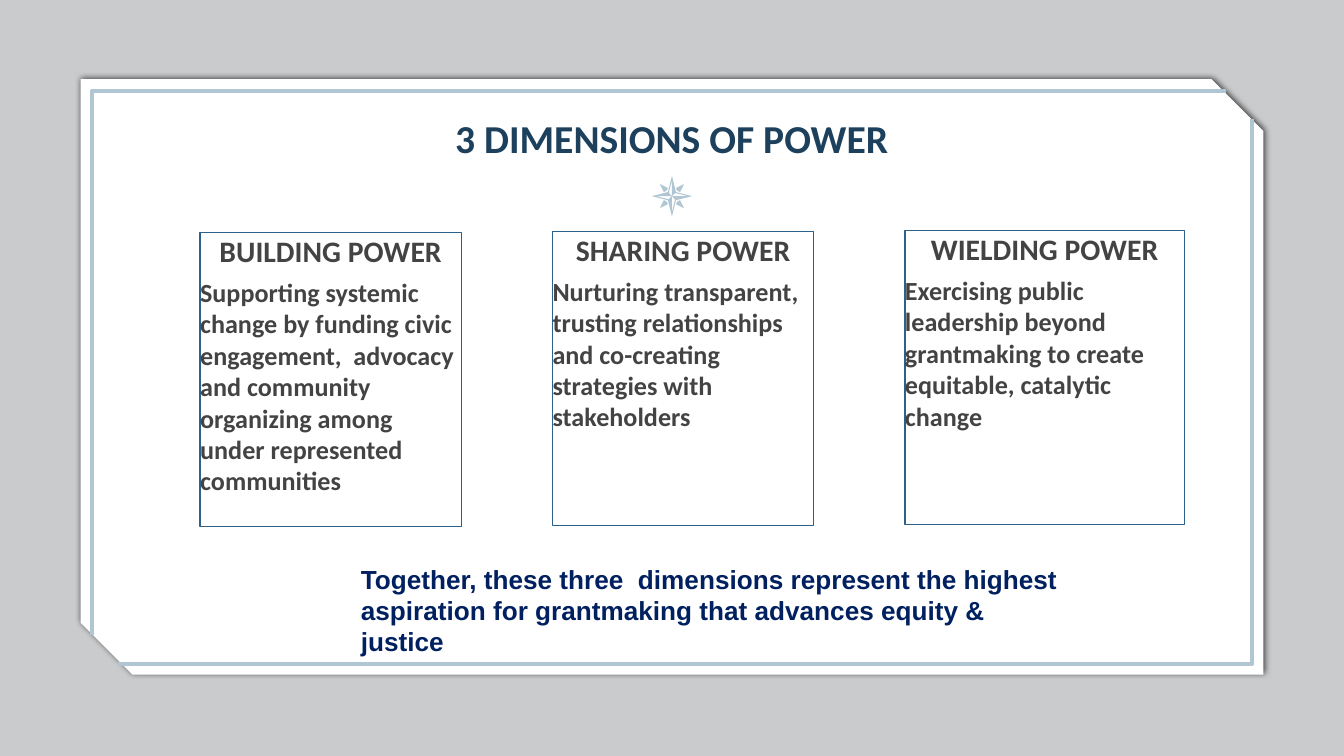
from lxml.etree import SubElement
from pptx import Presentation
from pptx.dml.color import RGBColor
from pptx.enum.shapes import MSO_SHAPE as Preset
from pptx.enum.text import MSO_ANCHOR as Anchor, MSO_AUTO_SIZE as AutoSize, PP_ALIGN as Align
from pptx.oxml import parse_xml
from pptx.oxml.ns import nsdecls, qn
from pptx.util import Pt

# Content
TITLE = "3 DIMENSIONS OF POWER"
DIMENSIONS = [  # heading, description, left, top, width
    ("BUILDING POWER", "Supporting systemic change by funding civic engagement,  advocacy and "
     "community  organizing among under represented communities", 107.2, 124.6, 140),
    ("SHARING POWER", "Nurturing transparent, trusting relationships and co-creating  "
     "strategies with stakeholders", 296, 124, 140),
    ("WIELDING POWER", "Exercising public leadership beyond grantmaking to create  "
     "equitable, catalytic change", 484.8, 123.6, 149.8),
]
SUMMARY = ("Together, these three  dimensions represent the highest  aspiration for "
           "grantmaking that advances equity & justice")

# Colours and sizes
WHITE = RGBColor(0xFF, 0xFF, 0xFF)
BACKDROP = RGBColor(0x04, 0x0E, 0x11)
PALE_BLUE = RGBColor(0xB0, 0xC6, 0xD3)
TITLE_BLUE = RGBColor(0x1D, 0x40, 0x5D)
BORDER_BLUE = RGBColor(0x2B, 0x61, 0x8B)
BODY_GREY = RGBColor(0x43, 0x43, 0x43)
NAVY = RGBColor(0x00, 0x20, 0x60)
WIDTH, HEIGHT = 720, 405
BOX_HEIGHT = 157.5
CARD = (43.2, 42.4, 633.6, 319)
FRAME_LINES = [
    [(49.2, 340.4), (49.2, 48.8), (657, 48.8)],
    [(670.8, 64), (670.8, 355.6), (63, 355.6)],
]
STAR_CENTRE, STAR_UNIT = (360, 105.1), 0.72
HEADING = {"name": "Calibri", "size": Pt(15.9), "bold": True}
NO_INSETS = dict.fromkeys(("margin_left", "margin_top", "margin_right", "margin_bottom"), 0)


def apply(target, values):
    for name, value in values.items():
        setattr(target, name, value)


def add_panel(preset, frame, fill=None, line=None):
    panel = page.shapes.add_shape(preset, *map(Pt, frame))
    return paint(panel, fill, line, 0.75)


def paint(shape, fill=None, line=None, line_width=1):
    shape.shadow.inherit = False
    if fill is None:
        shape.fill.background()
    else:
        shape.fill.solid()
        shape.fill.fore_color.rgb = fill
    if line is None:
        shape.line.fill.background()
    else:
        shape.line.color.rgb = line
        shape.line.width = Pt(line_width)
    return shape


def add_outline(contours, close):
    points = [[(Pt(x), Pt(y)) for x, y in contour] for contour in contours]
    builder = page.shapes.build_freeform(*points[0][0])
    for index, contour in enumerate(points):
        if index:
            builder.move_to(*contour[0])
        builder.add_line_segments(contour[1:], close=close)
    return builder.convert_to_shape()


def write(para, text, color, font, **layout):
    apply(para, layout)
    span = para.add_run()
    span.text = text
    apply(span.font, font)
    span.font.color.rgb = color


def turn(points, quarters):
    for _ in range(quarters):
        points = [(-y, x) for x, y in points]
    return points


def place_star(points):
    return [(STAR_CENTRE[0] + x * STAR_UNIT, STAR_CENTRE[1] + y * STAR_UNIT) for x, y in points]


deck = Presentation()
deck.slide_width, deck.slide_height = Pt(WIDTH), Pt(HEIGHT)
page = deck.slides.add_slide(deck.slide_layouts[5])

# Translucent backdrop
backdrop = add_panel(Preset.RECTANGLE, (0, 0, WIDTH, HEIGHT), BACKDROP)
tint = backdrop._element.spPr.find(qn("a:solidFill"))[0]
SubElement(tint, qn("a:alpha")).set("val", "21000")

# Card with clipped corners and a soft shadow
card = add_panel(Preset.SNIP_2_DIAG_RECTANGLE, CARD, WHITE)
card.adjustments[0], card.adjustments[1] = 0, 0.087
effects = card._element.spPr.find(qn("a:effectLst"))
effects.append(parse_xml(
    f'<a:outerShdw {nsdecls("a")} blurRad="{Pt(3.4)}" dist="{Pt(0.8)}" dir="0">'
    '<a:srgbClr val="000000"><a:alpha val="68000"/></a:srgbClr></a:outerShdw>'))
for corner in FRAME_LINES:
    paint(add_outline([corner], False), line=PALE_BLUE, line_width=2.25)

# Compass star: four small kites around a four-pointed star with cut-outs
quarters = range(4)
for quarter in quarters:
    kite = turn([(-9, -9), (-6, -3), (-4, -4), (-3, -6)], quarter)
    paint(add_outline([place_star(kite)], True), PALE_BLUE)
star = [point for quarter in quarters for point in turn([(0, -15), (3, -3)], quarter)]
cutouts = [turn([(0, -12), (0, 0), (-2.3, -2.5)], quarter) for quarter in quarters]
paint(add_outline([place_star(part) for part in [star, *cutouts]], True), PALE_BLUE)

# Title, brought in front of the card
title = page.shapes.title
page.shapes._spTree.append(title._element)
apply(title, dict(left=Pt(155.5), top=Pt(54.7), width=Pt(409), height=Pt(31.7)))
apply(title.text_frame, NO_INSETS | dict(
    word_wrap=True, auto_size=AutoSize.NONE, vertical_anchor=Anchor.BOTTOM))
write(title.text_frame.paragraphs[0], TITLE, TITLE_BLUE,
      HEADING | {"size": Pt(21.2)}, alignment=Align.CENTER)

# Three dimension boxes
for heading, description, left, top, width in DIMENSIONS:
    box = add_panel(Preset.RECTANGLE, (left, top, width, BOX_HEIGHT), line=BORDER_BLUE)
    frame = box.text_frame
    apply(frame, NO_INSETS | dict(word_wrap=True, vertical_anchor=Anchor.TOP))
    write(frame.paragraphs[0], heading, BODY_GREY, HEADING,
          alignment=Align.CENTER, space_before=Pt(4.4))
    write(frame.add_paragraph(), description, BODY_GREY, HEADING | {"size": Pt(14)},
          alignment=Align.LEFT, space_before=Pt(4.4))

# Summary
summary = page.shapes.add_textbox(*map(Pt, (186.2, 298.1, 395.3, 41)))
apply(summary.text_frame, dict(word_wrap=True, auto_size=AutoSize.SHAPE_TO_FIT_TEXT))
write(summary.text_frame.paragraphs[0], SUMMARY, NAVY,
      {"name": "Arial", "size": Pt(14), "bold": True})

deck.save("out.pptx")
